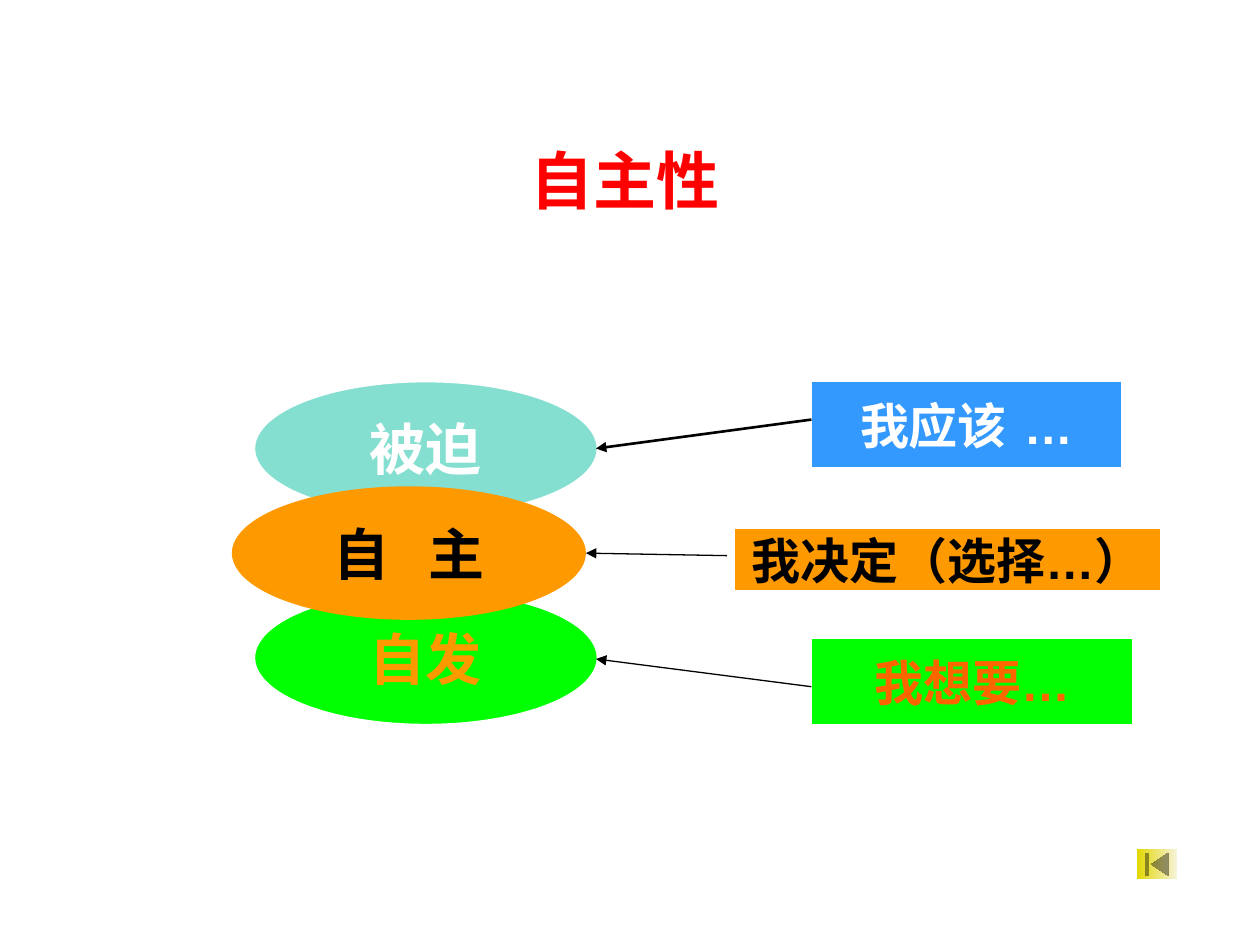
from lxml import etree
from pptx import Presentation
from pptx.dml.color import RGBColor
from pptx.enum.shapes import MSO_CONNECTOR, MSO_SHAPE as SHAPE
from pptx.enum.text import MSO_ANCHOR, PP_ALIGN
from pptx.oxml.ns import qn
from pptx.util import Inches, Pt

WHITE = RGBColor(0xFF, 0xFF, 0xFF)
BLACK = RGBColor(0x00, 0x00, 0x00)
RED = RGBColor(0xFF, 0x00, 0x00)
GREEN = RGBColor(0x00, 0xFF, 0x00)
TEAL = RGBColor(0x85, 0xDF, 0xD0)
ORANGE = RGBColor(0xFF, 0x99, 0x00)
DARK_ORANGE = RGBColor(0xFF, 0x66, 0x00)
BLUE = RGBColor(0x33, 0x99, 0xFF)
GOLD = RGBColor(0xE2, 0xD7, 0x00)
CREAM = RGBColor(0xF6, 0xF3, 0xD8)

TITLE_FONT = "Noto Sans CJK SC"
BODY_FONT = "DejaVu Sans"
ELLIPSIS_FONT = "Arial"
WORD_GAP = 11  # extra points after the space between two characters

# fill, font colour, text runs, left, top, width, outlined
ELLIPSES = [
    (GREEN, ORANGE, ["自发"], 2.02, 4.69, 2.72, True),
    (TEAL, WHITE, ["被迫"], 2.02, 3.03, 2.72, True),
    (ORANGE, BLACK, ["自", " ", "主"], 1.84, 3.86, 2.81, False),
]
# fill, font colour, text runs, left, top, width, height
STATEMENTS = [
    (GREEN, DARK_ORANGE, ["我想要", "…"], 6.44, 5.07, 2.55, 0.68),
    (BLUE, WHITE, ["我应该 ", "…"], 6.44, 3.03, 2.46, 0.68),
    (ORANGE, BLACK, ["我决定（选择", "…", "）"], 5.83, 4.19, 3.38, 0.5),
]
# start x, start y, end x, end y, line width
ARROWS = [
    (6.44, 3.33, 4.73, 3.56, 1.5),
    (5.77, 4.41, 4.65, 4.39, 0.75),
    (6.44, 5.45, 4.73, 5.23, 0.75),
]


def write_text(s, runs, size, color, font=BODY_FONT, wrap=False):
    """Fill a shape with one centred bold paragraph."""
    tf = s.text_frame
    tf.word_wrap = wrap
    tf.vertical_anchor = MSO_ANCHOR.MIDDLE
    p = tf.paragraphs[0]
    p.alignment = PP_ALIGN.CENTER
    for text in runs:
        r = p.add_run()
        r.text = text
        r.font.color.rgb = color
        face = ELLIPSIS_FONT if text == "…" else font
        for name, value in {"size": Pt(size), "bold": True, "name": face}.items():
            setattr(r.font, name, value)
        rpr = r.font._element
        etree.SubElement(rpr, qn("a:ea")).set("typeface", face)
        if text == " ":
            rpr.set("spc", str(WORD_GAP * 100))


def add_title(slide, text):
    s = slide.shapes.add_textbox(Inches(0.46), Inches(0.76), Inches(9), Inches(1.33))
    write_text(s, [text], 36, RED, TITLE_FONT, wrap=True)


def add_label(slide, kind, box, fill, color, runs, size, outlined=True):
    s = slide.shapes.add_shape(kind, *map(Inches, box))
    s.shadow.inherit = False
    s.fill.solid()
    s.fill.fore_color.rgb = fill
    if outlined:
        s.line.color.rgb = WHITE
        s.line.width = Pt(0.75)
    else:
        s.line.fill.background()
    write_text(s, runs, size, color)


def add_arrow(slide, x1, y1, x2, y2, width):
    ends = map(Inches, (x1, y1, x2, y2))
    c = slide.shapes.add_connector(MSO_CONNECTOR.STRAIGHT, *ends)
    c.line.color.rgb = BLACK
    c.line.width = Pt(width)
    etree.SubElement(c.line._get_or_add_ln(), qn("a:tailEnd")).set("type", "triangle")
    etree.SubElement(c._element.spPr, qn("a:effectLst"))


def add_back_button(slide):
    box = map(Inches, (9.02, 6.74, 0.32, 0.24))
    s = slide.shapes.add_shape(SHAPE.ACTION_BUTTON_BEGINNING, *box)
    s.shadow.inherit = False
    s.line.fill.background()
    s.fill.gradient()
    s.fill.gradient_angle = 0
    for stop, color, position in zip(s.fill.gradient_stops, (GOLD, CREAM), (0, 1)):
        stop.color.rgb = color
        stop.position = position


def main():
    prs = Presentation()
    prs.slide_width, prs.slide_height = Inches(10), Inches(7.5)
    slide = prs.slides.add_slide(prs.slide_layouts[6])
    add_title(slide, "自主性")
    for fill, color, runs, x, y, w, outlined in ELLIPSES:
        add_label(slide, SHAPE.OVAL, (x, y, w, 1.06), fill, color, runs, 32, outlined)
    for fill, color, runs, *box in STATEMENTS:
        add_label(slide, SHAPE.RECTANGLE, box, fill, color, runs, 28)
    for arrow in ARROWS:
        add_arrow(slide, *arrow)
    add_back_button(slide)
    prs.save("out.pptx")


if __name__ == "__main__":
    main()
